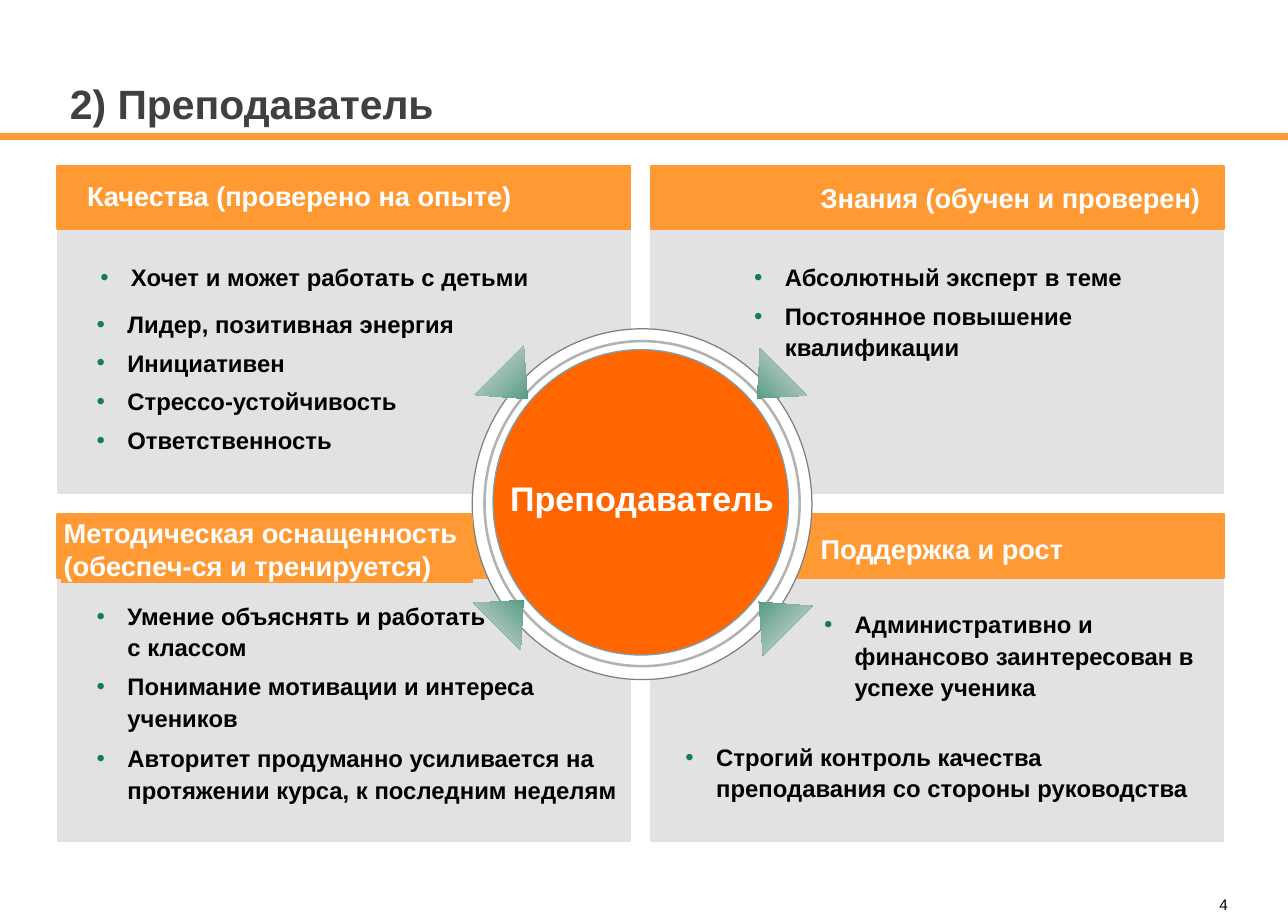
from dataclasses import dataclass
from itertools import product

from lxml import etree
from pptx import Presentation
from pptx.dml.color import RGBColor
from pptx.enum.shapes import MSO_CONNECTOR, MSO_SHAPE
from pptx.enum.text import MSO_ANCHOR, MSO_AUTO_SIZE, PP_ALIGN
from pptx.oxml.ns import qn
from pptx.util import Pt

RECTANGLE, OVAL = MSO_SHAPE.RECTANGLE, MSO_SHAPE.OVAL
TRIANGLE = MSO_SHAPE.ISOSCELES_TRIANGLE
STRAIGHT = MSO_CONNECTOR.STRAIGHT
TOP, BOTTOM = MSO_ANCHOR.TOP, MSO_ANCHOR.BOTTOM
LEFT, CENTER, RIGHT = PP_ALIGN.LEFT, PP_ALIGN.CENTER, PP_ALIGN.RIGHT
NO_AUTOFIT = MSO_AUTO_SIZE.NONE

WHITE = RGBColor(0xFF, 0xFF, 0xFF)
BLACK = RGBColor(0x00, 0x00, 0x00)
CHARCOAL = RGBColor(0x40, 0x40, 0x40)
ORANGE = RGBColor(0xFF, 0x99, 0x33)
DEEP_ORANGE = RGBColor(0xFF, 0x66, 0x00)
GREEN = RGBColor(0x17, 0x7B, 0x57)
PANEL_GREY = RGBColor(0xE2, 0xE2, 0xE2)
RING_GREY = RGBColor(0x80, 0x80, 0x80)
LIGHT_RING = RGBColor(0xB2, 0xB2, 0xB2)
DISC_EDGE = RGBColor(0x79, 0xA2, 0xB3)

FONT = "Arial"
PAGE_WIDTH, PAGE_HEIGHT = 756, 540
RULE_TOP = 79.2
COLUMNS = (33.8, 382.2)
ROWS = (97.2, 302)
PANEL_WIDTH, PANEL_HEIGHT, HEADER_HEIGHT = 336.2, 192.2, 37.4


@dataclass(frozen=True)
class Box:
    left: float
    top: float
    width: float
    height: float

    def lengths(self) -> tuple:
        return Pt(self.left), Pt(self.top), Pt(self.width), Pt(self.height)


@dataclass(frozen=True)
class Style:
    size: float
    color: RGBColor
    bold: bool = True
    align: PP_ALIGN = LEFT


@dataclass(frozen=True)
class Label:
    box: Box
    text: str
    style: Style
    margins: tuple = (0, 0)
    fill: RGBColor | None = None


@dataclass(frozen=True)
class BulletList:
    box: Box
    items: tuple
    margins: tuple = (7.2, 7.2)


@dataclass(frozen=True)
class Disc:
    box: Box
    fill: RGBColor
    edge: RGBColor
    weight: float


@dataclass(frozen=True)
class Arrow:
    box: Box
    rotation: int
    flips: tuple = ()


HEADING = Style(16, WHITE)
HUB = Style(20, WHITE, align=CENTER)
TITLE = Style(24, CHARCOAL)
PAGE_NUMBER = Style(9, BLACK, bold=False, align=RIGHT)
BODY = Style(14, BLACK)

RINGS = (
    Disc(Box(277.2, 193, 199.4, 205.9), WHITE, RING_GREY, 0.75),
    Disc(Box(284.4, 200.2, 185, 190.8), WHITE, LIGHT_RING, 1.5),
)
HUB_DISC = Disc(Box(289.4, 205.2, 173.5, 179.3), DEEP_ORANGE, DISC_EDGE, 0.75)
ARROWS = (
    Arrow(Box(280.8, 213.8, 41, 23.8), 135),
    Arrow(Box(280.1, 349.2, 38.9, 21.6), 225, ("flipV",)),
    Arrow(Box(432.7, 215.3, 38.9, 21.6), 225, ("flipH",)),
    Arrow(Box(433.4, 349.9, 41, 23.8), 135, ("flipH", "flipV")),
)
LABELS = (
    Label(Box(49.7, 105.1, 258.5, 19.4), "Качества (проверено на опыте)", HEADING, (1.4, 0)),
    Label(Box(481.7, 106.6, 230, 19.4), "Знания (обучен и проверен)", HEADING),
    Label(Box(36, 303.1, 241.2, 38.9), "Методическая оснащенность (обеспеч-ся и тренируется)",
          HEADING, (1.4, 0), ORANGE),
    Label(Box(481.7, 312.5, 150, 19.4), "Поддержка и рост", HEADING),
    Label(Box(288.9, 272.9, 176, 38.9), "Преподаватель", HUB, (7.2, 7.2)),
    Label(Box(706.3, 525.6, 14.4, 10.8), "4", PAGE_NUMBER),
)
LISTS = (
    BulletList(Box(51.8, 145.4, 277.2, 33.1), ("Хочет и может работать с детьми",)),
    BulletList(Box(49.7, 172.8, 260, 104.4), (
        "Лидер, позитивная энергия", "Инициативен", "Стрессо-устойчивость", "Ответственность")),
    BulletList(Box(435.6, 145.4, 263.5, 99.4), (
        "Абсолютный эксперт в теме", "Постоянное повышение квалификации")),
    BulletList(Box(49.7, 344.2, 301.7, 94.3), (
        "Умение объяснять и работать\nс классом", "Понимание мотивации и интереса учеников")),
    BulletList(Box(49.7, 427.7, 321.8, 51.8), (
        "Авторитет продуманно усиливается на протяжении курса, к последним неделям",)),
    BulletList(Box(476.6, 349.2, 236.9, 69.1), (
        "Административно и финансово заинтересован в успехе ученика",)),
    BulletList(Box(395.3, 430.6, 312.5, 44.6), (
        "Строгий контроль качества преподавания со стороны руководства",), (7.2, 3.6)),
)


def set_frame(frame, margins: tuple, anchor: MSO_ANCHOR = TOP) -> None:
    frame.word_wrap = True
    frame.auto_size = NO_AUTOFIT
    frame.vertical_anchor = anchor
    frame.margin_left = frame.margin_right = Pt(margins[0])
    frame.margin_top = frame.margin_bottom = Pt(margins[1])


def write(para, text: str, style: Style) -> None:
    para.alignment = style.align
    for number, line in enumerate(text.split("\n")):
        if number:
            para.add_line_break()
        span = para.add_run()
        span.text = line
        span.font.name = FONT
        span.font.size = Pt(style.size)
        span.font.bold = style.bold
        span.font.color.rgb = style.color


def add_bullet(para) -> None:
    properties = para._p.get_or_add_pPr()
    properties.set("marL", str(Pt(18)))
    properties.set("indent", str(Pt(-18)))
    color = etree.SubElement(properties, qn("a:buClr"))
    etree.SubElement(color, qn("a:srgbClr"), val=str(GREEN))
    etree.SubElement(properties, qn("a:buFont"), typeface=FONT)
    etree.SubElement(properties, qn("a:buChar"), char="•")


def draw_shape(page, kind: MSO_SHAPE, box: Box, fill: RGBColor, edge: RGBColor, weight: float) -> None:
    shape = page.shapes.add_shape(kind, *box.lengths())
    shape.shadow.inherit = False
    shape.fill.solid()
    shape.fill.fore_color.rgb = fill
    shape.line.color.rgb = edge
    shape.line.width = Pt(weight)


def draw_disc(page, disc: Disc) -> None:
    draw_shape(page, OVAL, disc.box, disc.fill, disc.edge, disc.weight)


def draw_arrow(page, arrow: Arrow) -> None:
    shape = page.shapes.add_shape(TRIANGLE, *arrow.box.lengths())
    shape.shadow.inherit = False
    shape.rotation = arrow.rotation
    for flip in arrow.flips:
        shape._element.spPr.xfrm.set(flip, "1")
    shape.line.fill.background()
    shape.fill.gradient()
    shape.fill.gradient_angle = 270
    for stop, color in zip(shape.fill.gradient_stops, (GREEN, PANEL_GREY)):
        stop.color.rgb = color
    for stop, position in zip(shape.fill.gradient_stops, (0, 1)):
        stop.position = position


def draw_label(page, label: Label) -> None:
    box = page.shapes.add_textbox(*label.box.lengths())
    if label.fill is not None:
        box.fill.solid()
        box.fill.fore_color.rgb = label.fill
        box.line.color.rgb = label.fill
        box.line.width = Pt(0.75)
    set_frame(box.text_frame, label.margins)
    write(box.text_frame.paragraphs[0], label.text, label.style)


def draw_list(page, bullets: BulletList) -> None:
    frame = page.shapes.add_textbox(*bullets.box.lengths()).text_frame
    set_frame(frame, bullets.margins)
    for number, item in enumerate(bullets.items):
        para = frame.add_paragraph() if number else frame.paragraphs[0]
        add_bullet(para)
        para.line_spacing = 1.1
        para.space_before = Pt(4.2 if number else 0)
        write(para, item, BODY)


def draw_title(page) -> None:
    title = page.shapes.title
    title.left, title.top, title.width, title.height = Box(41, 13, 679, 65.5).lengths()
    set_frame(title.text_frame, (0, 3.6), BOTTOM)
    write(title.text_frame.paragraphs[0], "2) Преподаватель", TITLE)


def draw_rule(page) -> None:
    rule = page.shapes.add_connector(STRAIGHT, Pt(0), Pt(RULE_TOP), Pt(PAGE_WIDTH), Pt(RULE_TOP))
    rule.line.color.rgb = ORANGE
    rule.line.width = Pt(2.25)
    effects = etree.SubElement(rule._element.spPr, qn("a:effectLst"))
    shadow = etree.SubElement(effects, qn("a:outerShdw"), dist=str(Pt(2)), dir="5400000")
    etree.SubElement(shadow, qn("a:srgbClr"), val=str(ORANGE))


def main() -> None:
    deck = Presentation()
    deck.slide_width, deck.slide_height = Pt(PAGE_WIDTH), Pt(PAGE_HEIGHT)
    page = deck.slides.add_slide(deck.slide_layouts[5])
    draw_title(page)
    draw_rule(page)
    for top, left in product(ROWS, COLUMNS):
        draw_shape(page, RECTANGLE, Box(left, top, PANEL_WIDTH, PANEL_HEIGHT), PANEL_GREY, PANEL_GREY, 0.75)
        draw_shape(page, RECTANGLE, Box(left, top, PANEL_WIDTH, HEADER_HEIGHT), ORANGE, ORANGE, 1.25)
    for ring in RINGS:
        draw_disc(page, ring)
    for arrow in ARROWS:
        draw_arrow(page, arrow)
    draw_disc(page, HUB_DISC)
    for label in LABELS:
        draw_label(page, label)
    for bullets in LISTS:
        draw_list(page, bullets)
    deck.save("out.pptx")


if __name__ == "__main__":
    main()
